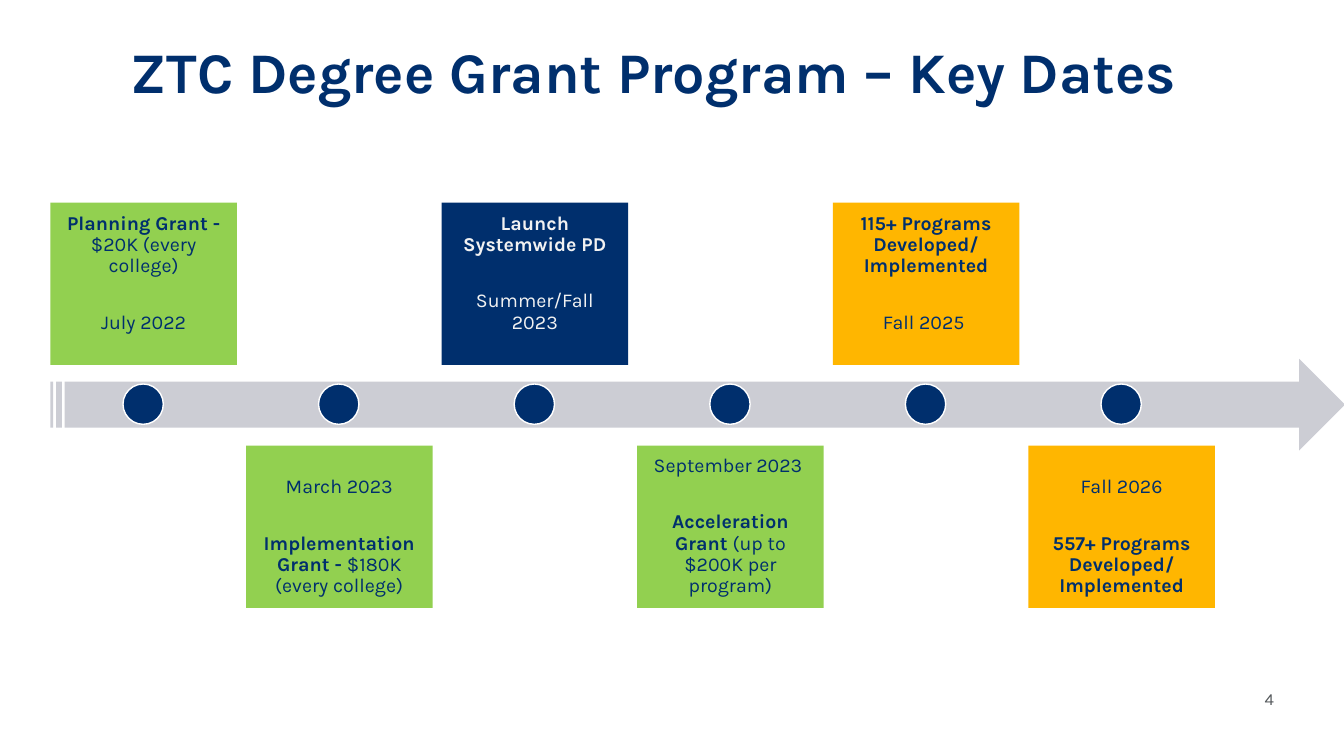
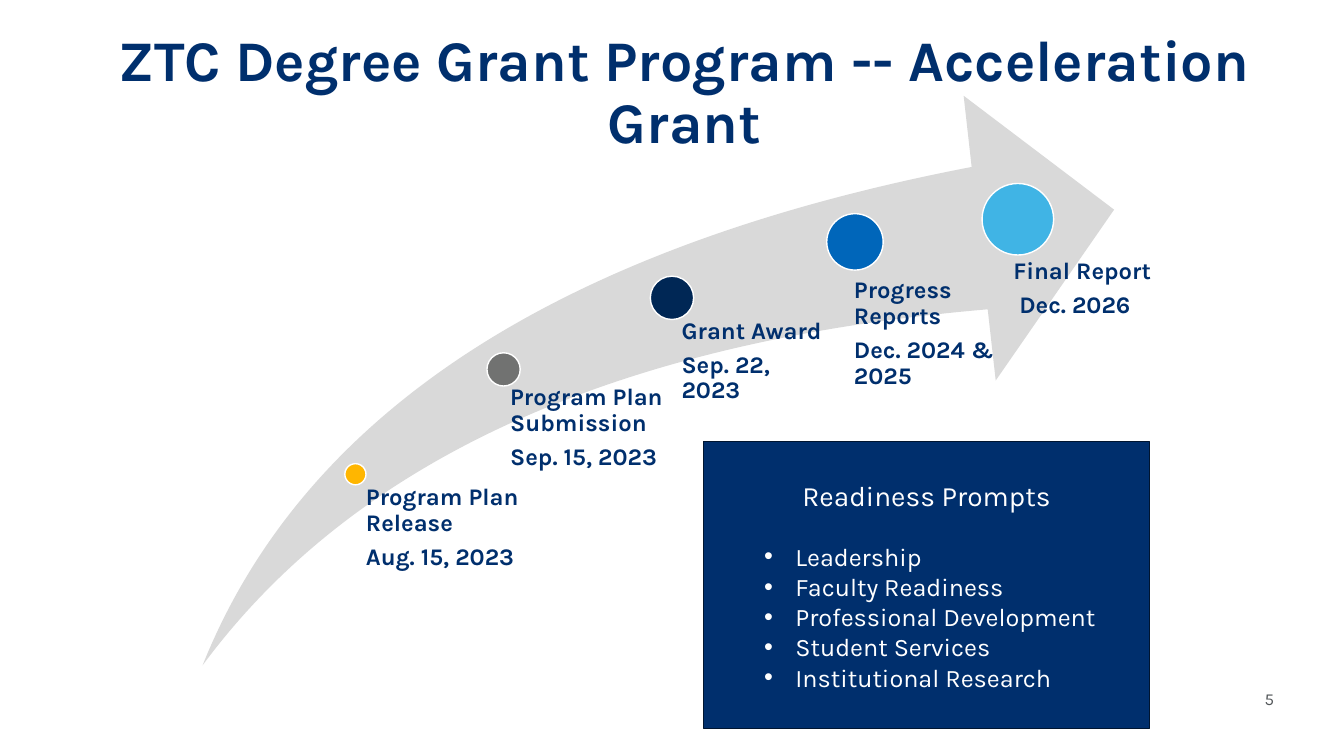
import pptx
import pptx.dml.color
import pptx.enum.shapes
import pptx.enum.text
import pptx.util
from lxml import etree

PX = 9144  # 100 px to the inch
RGB = pptx.dml.color.RGBColor
SHAPE = pptx.enum.shapes.MSO_SHAPE
ALIGN = pptx.enum.text.PP_ALIGN
ANCHOR = pptx.enum.text.MSO_ANCHOR

FONT = "Karla"
NAVY = RGB(0x00, 0x2F, 0x6D)
DEEP_NAVY = RGB(0x00, 0x27, 0x55)
BOX_EDGE = RGB(0x00, 0x15, 0x30)
BLUE = RGB(0x00, 0x66, 0xBA)
SKY = RGB(0x40, 0xB4, 0xE5)
GREEN = RGB(0x92, 0xD0, 0x50)
GOLD = RGB(0xFF, 0xB6, 0x00)
WHITE = RGB(0xFF, 0xFF, 0xFF)
OFF_WHITE = RGB(0xF2, 0xF2, 0xF2)
BAND_GREY = RGB(0xCC, 0xCD, 0xD4)
SWOOSH_GREY = RGB(0xD9, 0xD9, 0xD9)
DOT_GREY = RGB(0x71, 0x72, 0x71)
NUMBER_GREY = RGB(0x53, 0x57, 0x5A)


def add_shape(slide, kind, bounds, fill=None, line=None):
    """Add a preset shape, or a text box when kind is None; bounds are in px."""
    bounds = [length * PX for length in bounds]
    if kind is None:
        return slide.shapes.add_textbox(*bounds)
    shape = slide.shapes.add_shape(kind, *bounds)
    shape.shadow.inherit = False
    shape.fill.solid()
    shape.fill.fore_color.rgb = fill
    if line is None:
        shape.line.fill.background()
    else:
        shape.line.color.rgb = line
        shape.line.width = pptx.util.Pt(1)
    return shape


def write(shape, paragraphs, size, color, margins=(10, 5, 10, 5), anchor=ANCHOR.TOP,
          align=ALIGN.CENTER, spacing=0.9, gap=0):
    """Fill a shape with paragraphs, each a list of (text, bold) runs, gap points apart."""
    frame = shape.text_frame
    frame_format = {"word_wrap": True, "vertical_anchor": anchor}
    for side, margin in zip(("left", "top", "right", "bottom"), margins):
        frame_format[f"margin_{side}"] = margin * PX
    for name, value in frame_format.items():
        setattr(frame, name, value)
    for index, runs in enumerate(paragraphs):
        paragraph = frame.add_paragraph() if index else frame.paragraphs[0]
        paragraph.alignment = align
        paragraph.line_spacing = spacing
        if index and gap:
            paragraph.space_before = pptx.util.Pt(gap)
        for text, bold in runs:
            run = paragraph.add_run()
            run.text = text
            font_format = {"name": FONT, "size": pptx.util.Pt(size), "bold": bold}
            for name, value in font_format.items():
                setattr(run.font, name, value)
            run.font.color.rgb = color


presentation = pptx.Presentation()
presentation.slide_width = 1333 * PX
presentation.slide_height = 750 * PX

# Both slides: title and slide number
slides = []
for title, left, top, number in [
    ("ZTC Degree Grant Program – Key Dates", 0, 0, "4"),
    ("ZTC Degree Grant Program -- Acceleration Grant", 30, -18, "5"),
]:
    slide = presentation.slides.add_slide(presentation.slide_layouts[6])
    write(add_shape(slide, None, (left, top, 1273, 200)), [[(title, True)]],
          41, NAVY, margins=(50, 50, 25, 25))
    write(add_shape(slide, SHAPE.RECTANGLE, (1239, 673, 40, 40), WHITE), [[(number, False)]],
          12, NUMBER_GREY, anchor=ANCHOR.MIDDLE, spacing=1.0)
    slides.append(slide)
timeline_slide, grant_slide = slides

# Key dates: cards alternate above and below the band
CARD_LEFT, CARD_STEP, CARD_WIDTH, CARD_HEIGHT = 50, 194, 185, 161
MARKER = 40
add_shape(timeline_slide, SHAPE.STRIPED_RIGHT_ARROW, (50, 356, 1284, 91), BAND_GREY)
milestones = [
    (GREEN, NAVY, "July 2022", [("Planning Grant - ", True), ("$20K (every college)", False)]),
    (GREEN, NAVY, "March 2023",
     [("Implementation Grant - ", True), ("$180K (every college)", False)]),
    (NAVY, OFF_WHITE, "Summer/Fall 2023", [("Launch Systemwide PD", True)]),
    (GREEN, NAVY, "September 2023 ",
     [("Acceleration Grant ", True), ("(up to $200K per program)", False)]),
    (GOLD, NAVY, "Fall 2025 ", [("115+ Programs Developed/ Implemented", True)]),
    (GOLD, NAVY, "Fall 2026", [("557+ Programs Developed/ Implemented", True)]),
]
for index, (fill, color, date, event) in enumerate(milestones):
    left = CARD_LEFT + index * CARD_STEP
    paragraphs = [event, [(date, False)]]
    top, anchor = 201, ANCHOR.TOP
    if index % 2:
        paragraphs.reverse()
        top, anchor = 442, ANCHOR.BOTTOM
    card = add_shape(timeline_slide, SHAPE.RECTANGLE, (left, top, CARD_WIDTH, CARD_HEIGHT), fill)
    write(card, paragraphs, 14, color, margins=(11, 11, 11, 11), anchor=anchor, gap=25)
    marker_left = left + (CARD_WIDTH - MARKER) // 2
    add_shape(timeline_slide, SHAPE.OVAL, (marker_left, 381, MARKER, MARKER), NAVY, WHITE)

# Acceleration grant: readiness box
prompts_box = add_shape(grant_slide, SHAPE.RECTANGLE, (698, 438, 442, 285), NAVY, BOX_EDGE)
write(prompts_box, [[("Readiness Prompts", False)]], 20, WHITE,
      anchor=ANCHOR.MIDDLE, spacing=1.0)
prompts = ["Leadership", "Faculty Readiness", "Professional Development",
           "Student Services", "Institutional Research"]
for index, prompt in enumerate(prompts):
    paragraph = prompts_box.text_frame.add_paragraph()
    paragraph.alignment = ALIGN.LEFT
    if index == 0:
        paragraph.space_before = pptx.util.Pt(21)
    properties = paragraph._p.get_or_add_pPr()
    properties.set("marL", str(81 * PX))
    properties.set("indent", str(-31 * PX))
    for tag, name, value in [("a:buFont", "typeface", "Arial"), ("a:buChar", "char", "•")]:
        etree.SubElement(properties, pptx.oxml.ns.qn(tag)).set(name, value)
    run = paragraph.add_run()
    run.text = prompt
    for name, value in {"name": FONT, "size": pptx.util.Pt(18)}.items():
        setattr(run.font, name, value)
    run.font.color.rgb = WHITE

# Acceleration grant: steps along the swoosh
swoosh = add_shape(grant_slide, SHAPE.SWOOSH_ARROW, (201, 95, 904, 565), SWOOSH_GREY)
swoosh.adjustments[0] = 0.25
swoosh.adjustments[1] = 0.25
steps = [
    ((342, 460, 21), GOLD, (352, 481, 174, 134), 11, "Program Plan Release", "Aug. 15, 2023"),
    ((483, 350, 33), DOT_GREY, (489, 382, 174, 108), 17,
     "Program Plan Submission", "Sep. 15, 2023"),
    ((645, 274, 43), DEEP_NAVY, (653, 316, 174, 89), 23, "Grant Award", "Sep. 22, 2023"),
    ((820, 212, 56), BLUE, (817, 276, 173, 130), 30, "Progress Reports", "Dec. 2024 & 2025"),
    ((974, 182, 71), SKY, (967, 257, 181, 102), 38, "Final Report", " Dec. 2026"),
]
for (left, top, diameter), fill, label_bounds, inset, event, date in steps:
    add_shape(grant_slide, SHAPE.OVAL, (left, top, diameter, diameter), fill, WHITE)
    write(add_shape(grant_slide, None, label_bounds), [[(event, True)], [(date, True)]],
          17, NAVY, margins=(inset, 0, 0, 0), align=ALIGN.LEFT, gap=6)

presentation.save("out.pptx")
